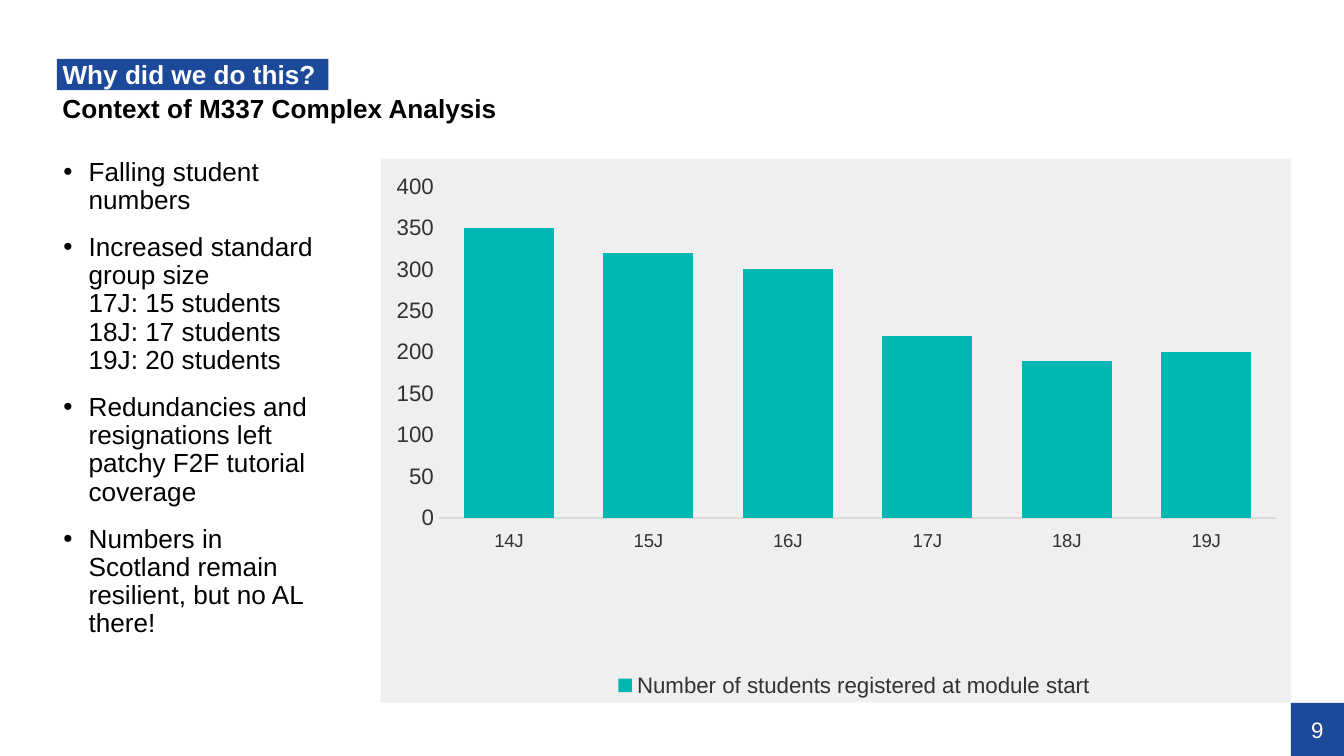
"""Build the slide on the context of M337 Complex Analysis."""
from lxml.etree import SubElement
from pptx import Presentation
from pptx.chart.data import CategoryChartData
from pptx.dml.color import RGBColor
from pptx.enum.chart import XL_CHART_TYPE as CT, XL_LEGEND_POSITION as LP
from pptx.enum.chart import XL_TICK_LABEL_POSITION as TLP, XL_TICK_MARK as TM
from pptx.enum.shapes import MSO_SHAPE as SHAPE
from pptx.enum.text import MSO_ANCHOR as ANCHOR, PP_ALIGN as ALIGN
from pptx.oxml import parse_xml
from pptx.oxml.ns import nsdecls, qn
from pptx.util import Pt

FONT = "Arial"
BLUE, TEAL, WHITE, BLACK, GREY = "1D499B", "00B7B2", "FFFFFF", "000000", "323232"
POINTS = [
    "Falling student numbers",
    "Increased standard group size\n17J: 15 students\n18J: 17 students\n19J: 20 students",
    "Redundancies and resignations left patchy F2F tutorial coverage",
    "Numbers in Scotland remain resilient, but no AL there!",
]
REGISTERED = {"14J": 350, "15J": 320, "16J": 300, "17J": 220, "18J": 190, "19J": 200}
PANEL_TOP, PANEL_W, PANEL_H = 85, 487.5, 291.5


def color(value):
    """Turn a hex string into a colour."""
    return RGBColor.from_string(value)


def style_font(font, size, value, bold=False):
    """Set typeface, size, colour and weight."""
    font.name, font.size, font.bold = FONT, Pt(size), bold
    font.color.rgb = color(value)


def add_rect(s, x, y, w, h, fill, alpha=None):
    """Add a flat rectangle, see-through if alpha (percent) is given."""
    sp = s.shapes.add_shape(SHAPE.RECTANGLE, Pt(x), Pt(y), Pt(w), Pt(h))
    sp.shadow.inherit = False
    sp.fill.solid()
    sp.fill.fore_color.rgb = color(fill)
    sp.line.fill.background()
    if alpha is not None:
        rgb = sp.fill._xPr.find(".//" + qn("a:srgbClr"))
        SubElement(rgb, qn("a:alpha"), val=str(alpha * 1000))
    return sp


def add_textbox(s, x, y, w, h):
    """Add an empty text box."""
    return s.shapes.add_textbox(Pt(x), Pt(y), Pt(w), Pt(h))


def set_frame(sp, anchor, left=0, top=0):
    """Prepare a wrapping text frame with the given insets."""
    tf = sp.text_frame
    tf.word_wrap, tf.vertical_anchor = True, anchor
    tf.margin_left, tf.margin_top = Pt(left), Pt(top)
    tf.margin_right = tf.margin_bottom = Pt(0)
    return tf


def add_runs(p, text, size, value, bold=False):
    """Add one run for each line of text, with line breaks between."""
    for i, line in enumerate(text.split("\n")):
        if i:
            p.add_line_break()
        r = p.add_run()
        r.text = line
        style_font(r.font, size, value, bold)


def set_heading(sp, text, value):
    """Write a bold heading line."""
    p = set_frame(sp, ANCHOR.MIDDLE, 3, 1.5).paragraphs[0]
    p.alignment, p.line_spacing = ALIGN.LEFT, 0.9
    add_runs(p, text, 14, value, True)


def set_page_number(sp, text):
    """Write the centred page number."""
    p = set_frame(sp, ANCHOR.MIDDLE).paragraphs[0]
    p.alignment = ALIGN.CENTER
    add_runs(p, text, 12, WHITE)


def add_bullets(s, x, y, w, h, items):
    """Add a bulleted list."""
    tf = set_frame(add_textbox(s, x, y, w, h), ANCHOR.TOP)
    for i, item in enumerate(items):
        p = tf.add_paragraph() if i else tf.paragraphs[0]
        pPr = p._p.get_or_add_pPr()
        pPr.set("marL", str(Pt(13.5)))
        pPr.set("indent", str(Pt(-13.5)))
        SubElement(pPr, qn("a:buFont"), typeface=FONT)
        SubElement(pPr, qn("a:buChar"), char="•")
        p.line_spacing = 0.9
        p.space_before = Pt(10 if i else 0)
        add_runs(p, item, 14, BLACK)


def set_plot_layout(chart, x, y, w, h):
    """Fix the inner plot area as fractions of the chart."""
    parts = "".join(f'<c:{tag} val="{val}"/>' for tag, val in (
        ("layoutTarget", "inner"), ("xMode", "edge"), ("yMode", "edge"),
        ("x", x), ("y", y), ("w", w), ("h", h)))
    area = chart._chartSpace.chart.plotArea
    for old in area.findall(qn("c:layout")):
        area.remove(old)
    area.insert(0, parse_xml(
        f'<c:layout {nsdecls("c")}><c:manualLayout>{parts}</c:manualLayout></c:layout>'))


def style_axis(axis, size):
    """Set the labels of an axis and drop its ticks and gridlines."""
    axis.has_major_gridlines = False
    axis.major_tick_mark = axis.minor_tick_mark = TM.NONE
    style_font(axis.tick_labels.font, size, GREY)


def add_column_chart(s, x, y, w, h, name, values):
    """Add the column chart of student numbers."""
    data = CategoryChartData()
    data.categories = list(values)
    data.add_series(name, list(values.values()))
    chart = s.shapes.add_chart(
        CT.COLUMN_CLUSTERED, Pt(x), Pt(y), Pt(w), Pt(h), data).chart
    style_font(chart.font, 10, BLACK)
    chart.has_title = False
    chart.has_legend = True
    chart.legend.position = LP.BOTTOM
    chart.legend.include_in_layout = False
    style_font(chart.legend.font, 12, GREY)

    plot = chart.plots[0]
    plot.gap_width, plot.vary_by_categories = 55, False
    fill = plot.series[0].format.fill
    fill.solid()
    fill.fore_color.rgb = color(TEAL)

    cat, val = chart.category_axis, chart.value_axis
    style_axis(cat, 10)
    cat.tick_label_position = TLP.LOW
    cat.format.line.color.rgb = color("D9D9D9")
    cat.format.line.width = Pt(0.75)
    style_axis(val, 12)
    val.minimum_scale, val.maximum_scale, val.major_unit = 0, 400, 50
    val.format.line.fill.background()
    set_plot_layout(chart, 20 / w, 15 / h, 451 / w, 177.5 / h)


def main():
    """Build and save the slide."""
    prs = Presentation()
    prs.slide_width, prs.slide_height = Pt(720), Pt(405)
    s = prs.slides.add_slide(prs.slide_layouts[6])

    add_rect(s, 204, PANEL_TOP, PANEL_W, PANEL_H, "CCCCCC", 30)
    set_page_number(add_rect(s, 691.5, 376.5, 28.5, 28.5, BLUE), "9")
    add_bullets(s, 34, PANEL_TOP, 142, PANEL_H, POINTS)
    set_heading(add_rect(s, 30.5, 31.5, 145.5, 16.75, BLUE), "Why did we do this?", WHITE)
    set_heading(add_textbox(s, 30.5, 48, 626, 20), "Context of M337 Complex Analysis", BLACK)
    add_column_chart(s, 212.5, PANEL_TOP, PANEL_W, PANEL_H,
                     "Number of students registered at module start", REGISTERED)
    prs.save("out.pptx")


if __name__ == "__main__":
    main()
